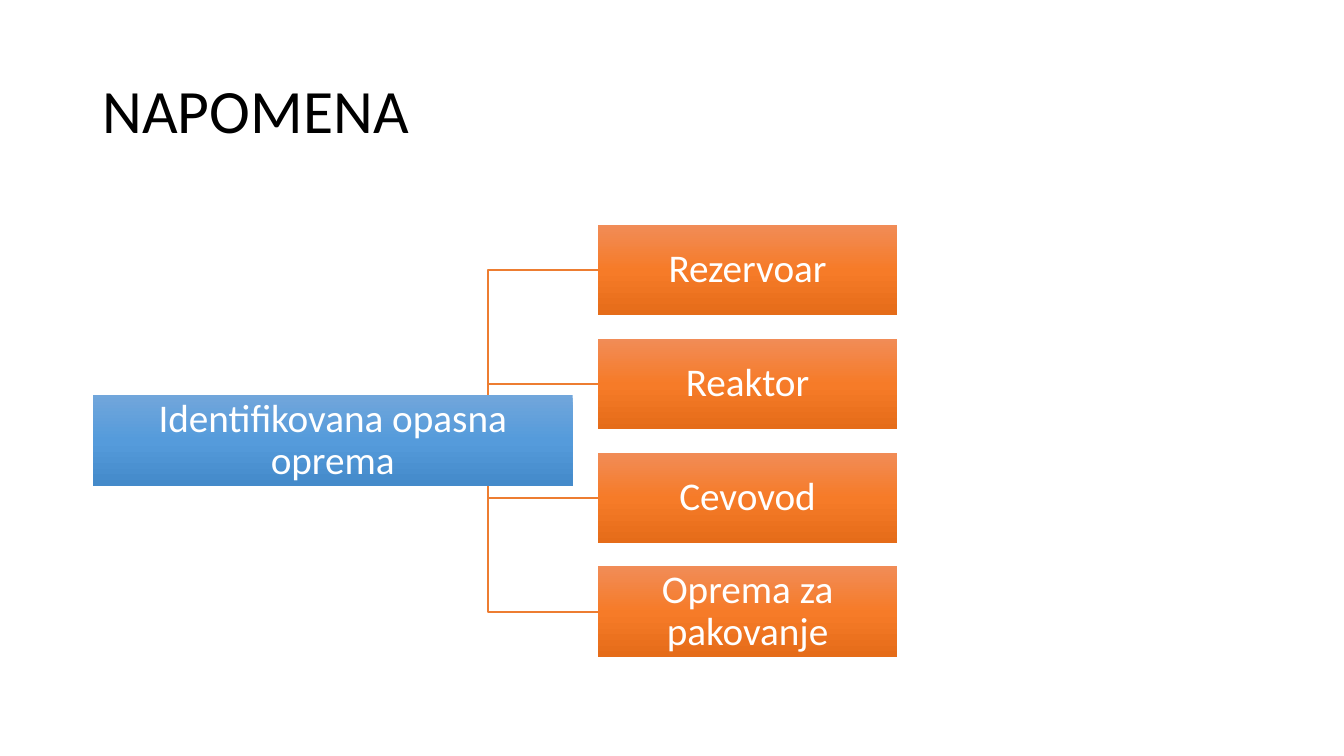
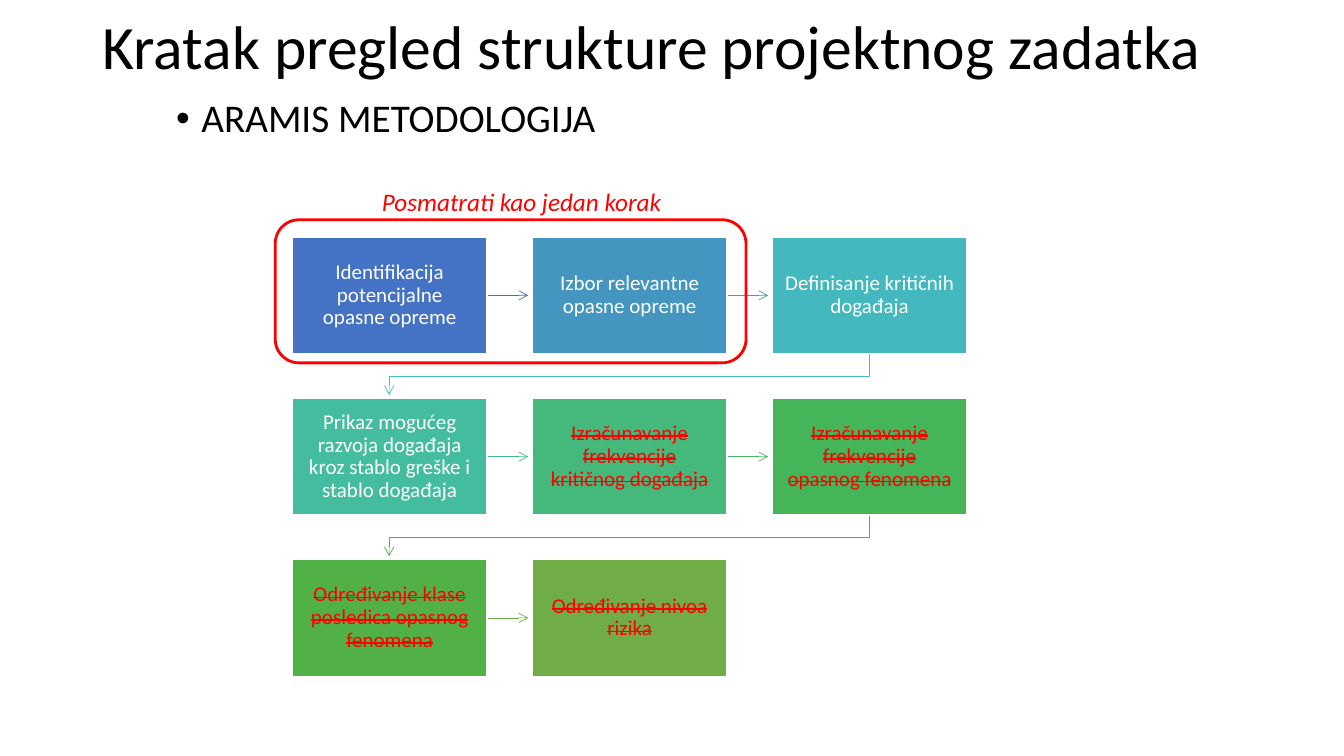
"""Build two slides: a tree of hazardous equipment and the steps of the ARAMIS method."""
from copy import deepcopy

from lxml.etree import SubElement
from pptx import Presentation
from pptx.dml.color import RGBColor
from pptx.enum.shapes import MSO_CONNECTOR as Link, MSO_SHAPE as Preset
from pptx.enum.text import MSO_ANCHOR as Anchor, PP_ALIGN as Align
from pptx.oxml.ns import qn
from pptx.util import Pt

PX = 9144
FONT = "Calibri"
COLORS = {"black": "000000", "white": "FFFFFF", "red": "FF0000", "branch": "ED7D31"}
ROOT_GRADIENT = ("71A6DB", "559BDB", "448ACA")
LEAF_GRADIENT = ("F18C57", "F67B28", "E56C19")

NOTE_TITLE = ("NAPOMENA", (92, 40, 1150, 145))
ROOT = ("Identifikovana opasna oprema", (92, 392, 476, 90))
LEAVES = ["Rezervoar", "Reaktor", "Cevovod", "Oprema za pakovanje"]
LEAF_LEFT, LEAF_TOP, LEAF_WIDTH, LEAF_HEIGHT, LEAF_PITCH = 593, 223, 297, 90, 113
TRUNK_START = (375, 438)

METHOD_TITLE = ("Kratak pregled strukture projektnog zadatka", (92, 5, 1150, 88))
METHOD_BULLET = ("ARAMIS METODOLOGIJA", (165, 93, 1150, 476))
STEPS = [
    ("Identifikacija potencijalne opasne opreme", "4472C4", "4472C4", False),
    ("Izbor relevantne opasne opreme", "4496C1", "449BC1", False),
    ("Definisanje kritičnih događaja", "43B8BF", "43BEB9", False),
    ("Prikaz mogućeg razvoja događaja kroz stablo greške i stablo događaja",
     "43BCA0", "43BB8D", False),
    ("Izračunavanje frekvencije kritičnog događaja", "44B97B", "45B664", True),
    ("Izračunavanje frekvencije opasnog fenomena", "45B559", "4CB146", True),
    ("Određivanje klase posledica opasnog fenomena", "52B146", "70AD47", True),
    ("Određivanje nivoa rizika", "70AD47", None, True),
]
COLUMNS = 3
STEP_LEFT, STEP_TOP, STEP_WIDTH, STEP_HEIGHT = 290, 235, 193, 116
STEP_PITCH_X, STEP_PITCH_Y, ARROW_LENGTH, TURN_DROP = 238, 160, 41, 22
FRAME = (273, 218, 467, 142)
CALLOUT = ("Posmatrati kao jedan korak", (369, 180, 313, 40))


def px(*lengths):
    return [length * PX for length in lengths]


def rgb(color):
    return RGBColor.from_string(COLORS.get(color, color))


def write(frame, text, size, color, align=Align.LEFT, spacing=0.9, inset=None):
    frame.word_wrap = True
    if inset is not None:
        frame.margin_left = frame.margin_right = inset * PX
        frame.margin_top = frame.margin_bottom = inset * PX
    para = frame.paragraphs[0]
    para.alignment = align
    para.line_spacing = spacing
    span = para.add_run()
    span.text = text
    span.font.name = FONT
    span.font.size = Pt(size)
    span.font.color.rgb = rgb(color)
    return para, span


def add_text(page, text, place, size, color="black", anchor=Anchor.TOP, **style):
    frame = page.shapes.add_textbox(*px(*place)).text_frame
    frame.vertical_anchor = anchor
    return write(frame, text, size, color, **style)


def add_title(page, text, place):
    add_text(page, text, place, 44, anchor=Anchor.MIDDLE)


def add_box(page, text, place, size, color, inset):
    box = page.shapes.add_shape(Preset.RECTANGLE, *px(*place))
    box.shadow.inherit = False
    box.text_frame.vertical_anchor = Anchor.MIDDLE
    span = write(box.text_frame, text, size, color, Align.CENTER, inset=inset)[1]
    return box, span


def add_gradient_box(page, text, place, gradient):
    box = add_box(page, text, place, 28, "white", 2)[0]
    box.line.fill.background()
    box.fill.gradient()
    box.fill.gradient_angle = 270
    first = box.fill.gradient_stops[0]._gs
    first.addnext(deepcopy(first))
    for index, (stop, color) in enumerate(zip(box.fill.gradient_stops, gradient)):
        stop.position = index / 2
        stop.color.rgb = rgb(color)


def style_line(shape, color, width, arrow=False):
    shape.line.color.rgb = rgb(color)
    shape.line.width = Pt(width)
    if arrow:
        SubElement(shape.line._get_or_add_ln(), qn("a:tailEnd"), type="arrow")


def add_link(page, kind, start, end, color, width, arrow=False):
    link = page.shapes.add_connector(kind, *px(*start, *end))
    style_line(link, color, width, arrow)
    SubElement(link._element.spPr, qn("a:effectLst"))


def add_turn(page, points, color):
    builder = page.shapes.build_freeform(*points[0], scale=PX)
    builder.add_line_segments(points[1:], close=False)
    turn = builder.convert_to_shape()
    turn.shadow.inherit = False
    turn.fill.background()
    style_line(turn, color, 0.5, arrow=True)


def add_step(page, index, text, fill, arrow_color, struck):
    row, column = divmod(index, COLUMNS)
    left = STEP_LEFT + column * STEP_PITCH_X
    top = STEP_TOP + row * STEP_PITCH_Y
    right, bottom = left + STEP_WIDTH, top + STEP_HEIGHT
    middle = top + STEP_HEIGHT // 2
    if arrow_color and column < COLUMNS - 1:
        add_link(page, Link.STRAIGHT, (right, middle), (right + ARROW_LENGTH, middle),
                 arrow_color, 0.5, arrow=True)
    elif arrow_color:
        center = left + STEP_WIDTH // 2
        target = STEP_LEFT + STEP_WIDTH // 2
        turn = bottom + TURN_DROP
        add_turn(page, [(center, bottom), (center, turn), (target, turn),
                        (target, bottom + ARROW_LENGTH)], arrow_color)
    box, span = add_box(page, text, (left, top, STEP_WIDTH, STEP_HEIGHT), 15,
                        "red" if struck else "white", 12)
    box.fill.solid()
    box.fill.fore_color.rgb = rgb(fill)
    style_line(box, "white", 1)
    if struck:
        span._r.get_or_add_rPr().set("strike", "sngStrike")


def build_note(page):
    add_title(page, *NOTE_TITLE)
    tops = [LEAF_TOP + index * LEAF_PITCH for index in range(len(LEAVES))]
    for top in tops:
        add_link(page, Link.ELBOW, TRUNK_START, (LEAF_LEFT, top + LEAF_HEIGHT // 2),
                 "branch", 1)
    add_gradient_box(page, *ROOT, ROOT_GRADIENT)
    for text, top in zip(LEAVES, tops):
        add_gradient_box(page, text, (LEAF_LEFT, top, LEAF_WIDTH, LEAF_HEIGHT), LEAF_GRADIENT)


def build_method(page):
    add_title(page, *METHOD_TITLE)
    para = add_text(page, *METHOD_BULLET, 28)[0]
    para.space_before = Pt(10)
    properties = para._p.get_or_add_pPr()
    properties.set("marL", str(25 * PX))
    properties.set("indent", str(-25 * PX))
    SubElement(properties, qn("a:buFont"), typeface="Arial")
    SubElement(properties, qn("a:buChar"), char="•")
    for index, step in enumerate(STEPS):
        add_step(page, index, *step)
    frame = page.shapes.add_shape(Preset.ROUNDED_RECTANGLE, *px(*FRAME))
    frame.shadow.inherit = False
    frame.fill.background()
    style_line(frame, "red", 2)
    span = add_text(page, *CALLOUT, 18, "red", spacing=1.0)[1]
    span.font.italic = True


def main():
    deck = Presentation()
    deck.slide_width, deck.slide_height = px(1333, 750)
    for build in (build_note, build_method):
        build(deck.slides.add_slide(deck.slide_layouts[6]))
    deck.save("out.pptx")


if __name__ == "__main__":
    main()
